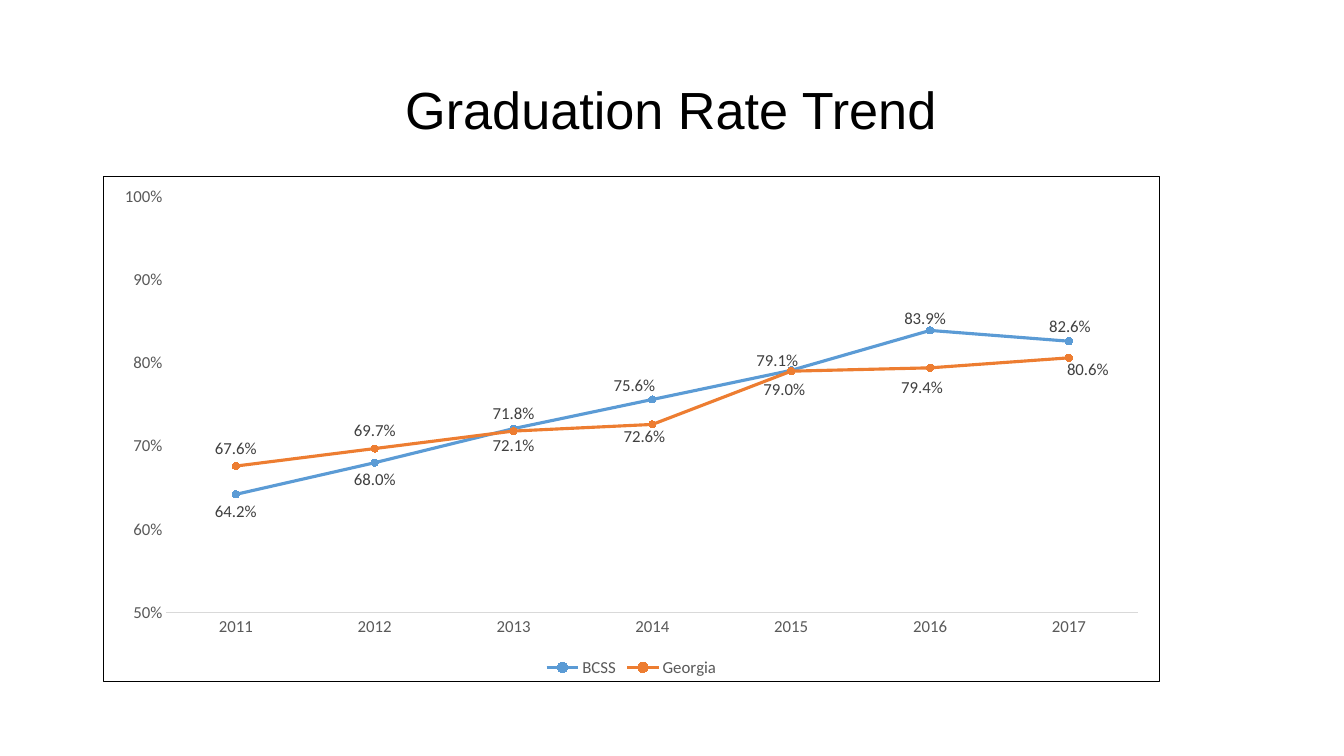
from lxml import etree
from pptx import Presentation
from pptx.chart.data import CategoryChartData
from pptx.dml.color import RGBColor
from pptx.enum.chart import (XL_CHART_TYPE, XL_LABEL_POSITION, XL_LEGEND_POSITION,
                             XL_MARKER_STYLE, XL_TICK_MARK)
from pptx.enum.text import MSO_ANCHOR, PP_ALIGN
from pptx.oxml import parse_xml
from pptx.oxml.ns import nsdecls, qn
from pptx.util import Pt

LINE_MARKERS = XL_CHART_TYPE.LINE_MARKERS
ABOVE, BELOW = XL_LABEL_POSITION.ABOVE, XL_LABEL_POSITION.BELOW
LEGEND_BOTTOM = XL_LEGEND_POSITION.BOTTOM
CIRCLE = XL_MARKER_STYLE.CIRCLE
NO_TICK = XL_TICK_MARK.NONE
MIDDLE = MSO_ANCHOR.MIDDLE
CENTER = PP_ALIGN.CENTER

PX = 914400 / 100.8
THEME = {
    "title_font": "Arial", "title_size": 37.3, "title_color": "000000",
    "chart_font": "Calibri", "chart_size": 12,
    "axis_text": "595959", "label_text": "404040",
    "axis_line": "D9D9D9", "border": "000000",
}
CHART_LEFT, CHART_TOP, CHART_WIDTH, CHART_HEIGHT = 103, 176, 1057, 506

YEARS = ["2011", "2012", "2013", "2014", "2015", "2016", "2017"]
FIRST_MOVED_YEAR = 3
RATES = [
    {"name": "BCSS", "color": "5B9BD5", "early": BELOW, "late": ABOVE,
     "values": [0.642, 0.68, 0.721, 0.756, 0.791, 0.839, 0.826],
     "shifts": [(-18, 4), (-14, 8), (-5, 6), (1, 3)]},
    {"name": "Georgia", "color": "ED7D31", "early": ABOVE, "late": BELOW,
     "values": [0.676, 0.697, 0.718, 0.726, 0.79, 0.794, 0.806],
     "shifts": [(-8, -5), (-7, 1), (-8, 2), (19, -6)]},
]


def style_font(font, name, size, color):
    font.name = name
    font.size = Pt(size)
    font.color.rgb = RGBColor.from_string(color)


def manual_layout(**settings):
    layout = parse_xml(f"<c:layout {nsdecls('c')}><c:manualLayout/></c:layout>")
    for tag, value in settings.items():
        etree.SubElement(layout[0], qn(f"c:{tag}")).set("val", str(value))
    return layout


presentation = Presentation()
presentation.slide_width = round(1344 * PX)
presentation.slide_height = round(756 * PX)
slide = presentation.slides.add_slide(presentation.slide_layouts[6])

title = slide.shapes.add_textbox(*(round(length * PX) for length in (45, 66, 1252, 85)))
title.text_frame.word_wrap = True
title.text_frame.vertical_anchor = MIDDLE
paragraph = title.text_frame.paragraphs[0]
paragraph.text = "Graduation Rate Trend"
paragraph.alignment = CENTER
style_font(paragraph.font, THEME["title_font"], THEME["title_size"], THEME["title_color"])

chart_data = CategoryChartData(number_format="0.0%")
chart_data.categories = YEARS
for rate in RATES:
    chart_data.add_series(rate["name"], rate["values"])
chart_box = (CHART_LEFT, CHART_TOP, CHART_WIDTH, CHART_HEIGHT)
chart = slide.shapes.add_chart(
    LINE_MARKERS, *(round(length * PX) for length in chart_box), chart_data).chart
chart.has_title = False
chart.has_legend = True
chart.legend.position = LEGEND_BOTTOM
chart.legend.include_in_layout = False
style_font(chart.font, THEME["chart_font"], THEME["chart_size"], THEME["axis_text"])
style_font(chart.legend.font, THEME["chart_font"], THEME["chart_size"], THEME["axis_text"])

for axis in (chart.category_axis, chart.value_axis):
    axis.major_tick_mark = axis.minor_tick_mark = NO_TICK
    axis.has_major_gridlines = False
    style_font(axis.tick_labels.font, THEME["chart_font"], THEME["chart_size"],
               THEME["axis_text"])
chart.category_axis.format.line.color.rgb = RGBColor.from_string(THEME["axis_line"])
chart.category_axis.format.line.width = Pt(0.75)
value_axis = chart.value_axis
value_axis.format.line.fill.background()
value_axis.minimum_scale, value_axis.maximum_scale, value_axis.major_unit = 0.5, 1, 0.1
value_axis.tick_labels.number_format = "0%"
value_axis.tick_labels.number_format_is_linked = False

chart.plots[0].vary_by_categories = False
for series, rate in zip(chart.plots[0].series, RATES):
    color = RGBColor.from_string(rate["color"])
    series.smooth = False
    series.format.line.color.rgb = color
    series.format.line.width = Pt(2.25)
    series.marker.style = CIRCLE
    series.marker.size = 5
    series.marker.format.fill.solid()
    series.marker.format.fill.fore_color.rgb = color
    series.marker.format.line.color.rgb = color
    labels = series.data_labels
    labels.show_value = True
    labels.number_format = "0.0%"
    labels.number_format_is_linked = False
    labels.position = rate["early"]
    style_font(labels.font, THEME["chart_font"], THEME["chart_size"], THEME["label_text"])
    for index, (shift_x, shift_y) in enumerate(rate["shifts"], FIRST_MOVED_YEAR):
        label = series.points[index].data_label
        style_font(label.font, THEME["chart_font"], THEME["chart_size"], THEME["label_text"])
        label.position = rate["late"]
        label_index = series._element.xpath(f"c:dLbls/c:dLbl/c:idx[@val='{index}']")[0]
        label_index.addnext(manual_layout(x=shift_x / CHART_WIDTH, y=shift_y / CHART_HEIGHT))

chart_space = chart._chartSpace
plot_area = chart_space.find(qn("c:chart")).find(qn("c:plotArea"))
for layout in plot_area.findall(qn("c:layout")):
    plot_area.remove(layout)
plot_area.insert(0, manual_layout(
    layoutTarget="inner", xMode="edge", yMode="edge",
    x=63 / CHART_WIDTH, y=20 / CHART_HEIGHT, w=973 / CHART_WIDTH, h=417 / CHART_HEIGHT))
chart_space.find(qn("c:chart")).addnext(parse_xml(
    f"<c:spPr {nsdecls('c', 'a')}><a:noFill/><a:ln w='{Pt(0.75)}'><a:solidFill>"
    f"<a:srgbClr val='{THEME['border']}'/></a:solidFill></a:ln></c:spPr>"))

presentation.save("out.pptx")
